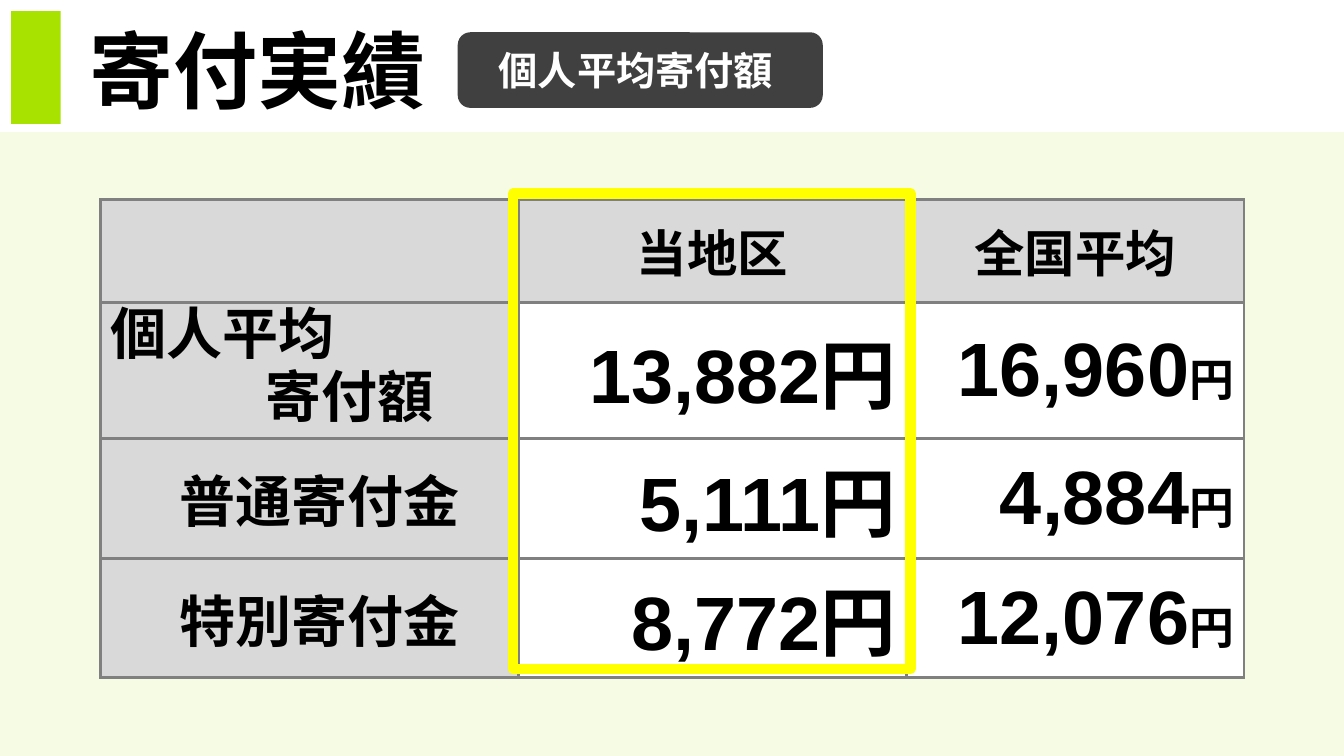
from dataclasses import dataclass
from typing import Any, NamedTuple, Optional

from lxml.etree import SubElement
from pptx import Presentation
from pptx.dml.color import RGBColor
from pptx.enum.shapes import MSO_SHAPE
from pptx.enum.text import MSO_ANCHOR, PP_ALIGN
from pptx.oxml.ns import qn
from pptx.util import Inches, Pt


@dataclass(frozen=True)
class Theme:
    """Colours, fonts and sizes in points shared by the whole slide."""

    background: str = "F5FCE3"
    accent: str = "A7E200"
    badge: str = "404040"
    highlight: str = "FFFF00"
    label_fill: str = "D9D9D9"
    value_fill: str = "FFFFFF"
    border: str = "808080"
    ink: str = "000000"
    light_ink: str = "FFFFFF"
    latin_font: str = "Arial"
    japanese_font: str = "Noto Sans CJK JP"
    title_size: float = 60
    badge_size: float = 28
    header_size: float = 36
    label_size: float = 40
    value_size: float = 54
    unit_size: float = 32
    border_width: float = 2.25
    highlight_width: float = 7.5


class Box(NamedTuple):
    """Left, top, width and height as percentages of the slide."""

    left: float
    top: float
    width: float
    height: float


class Block(NamedTuple):
    """A preset shape with its place, colours and optional text."""

    box: Box
    fill: Optional[str] = None
    line: Optional[str] = None
    preset: MSO_SHAPE = MSO_SHAPE.RECTANGLE
    text: str = ""


class Donation(NamedTuple):
    """One table row: its label, indents in inches and both amounts."""

    label: str
    margin: float
    indent: float
    district: str
    national: str


THEME = Theme()
SLIDE_WIDTH, SLIDE_HEIGHT = Inches(13.33), Inches(7.5)
TITLE_BOX = Box(5.93, 1.73, 92.65, 14.67)
TABLE_BOX = Box(7.5, 26.4, 85.07, 58.39)
COLUMN_SHARES = (31.06, 28.88, 25.13)
HEADER_SHARE, ROW_SHARE = 13.6, 14.93
HEADERS = ("", "当地区", "全国平均")
UNIT = "円"
DONATIONS = (
    Donation("個人平均\n寄付額", 1.53, -1.53, "13,882", "16,960"),
    Donation("普通寄付金", 0.68, 0, "5,111", "4,884"),
    Donation("特別寄付金", 0.68, 0, "8,772", "12,076"),
)
BACKDROP = (
    Block(Box(0, 17.47, 100, 82.53), THEME.background),
    Block(Box(0.83, 1.47, 3.68, 14.93), THEME.accent),
)
OVERLAYS = (
    Block(Box(38.18, 25.6, 29.56, 62.93), line=THEME.highlight),
    Block(Box(34.06, 4.27, 27.16, 10), THEME.badge,
          preset=MSO_SHAPE.ROUNDED_RECTANGLE, text="個人平均寄付額 "),
)


def across(share: float) -> int:
    """Convert a percentage of the slide width to a length."""
    return round(SLIDE_WIDTH * share / 100)


def down(share: float) -> int:
    """Convert a percentage of the slide height to a length."""
    return round(SLIDE_HEIGHT * share / 100)


def place(box: Box) -> tuple[int, int, int, int]:
    """Convert a box to slide lengths."""
    return across(box.left), down(box.top), across(box.width), down(box.height)


def write(paragraph: Any, text: str, *, size: float, color: str = THEME.ink,
          font: str = THEME.latin_font,
          align: PP_ALIGN = PP_ALIGN.LEFT) -> None:
    """Add bold text to a paragraph, breaking lines at newlines."""
    paragraph.alignment = align
    for number, line in enumerate(text.split("\n")):
        if number:
            paragraph.add_line_break()
        run = paragraph.add_run()
        run.text = line
        run.font.size = Pt(size)
        run.font.bold = True
        run.font.color.rgb = RGBColor.from_string(color)
        run.font.name = font
        SubElement(run.font._element, qn("a:ea"), typeface=THEME.japanese_font)


def add_block(slide: Any, block: Block) -> None:
    """Draw a preset shape with its text."""
    shape = slide.shapes.add_shape(block.preset, *place(block.box))
    shape.shadow.inherit = False
    if block.fill:
        shape.fill.solid()
        shape.fill.fore_color.rgb = RGBColor.from_string(block.fill)
    else:
        shape.fill.background()
    if block.line:
        shape.line.color.rgb = RGBColor.from_string(block.line)
        shape.line.width = Pt(THEME.highlight_width)
    else:
        shape.line.fill.background()
    if block.text:
        shape.text_frame.vertical_anchor = MSO_ANCHOR.MIDDLE
        write(shape.text_frame.paragraphs[0], block.text, size=THEME.badge_size,
              color=THEME.light_ink, font=THEME.japanese_font,
              align=PP_ALIGN.CENTER)


def style_cell(cell: Any, fill: str) -> Any:
    """Set borders, fill and anchor of a cell and return its paragraph."""
    properties = cell._tc.get_or_add_tcPr()
    for side in ("a:lnL", "a:lnR", "a:lnT", "a:lnB"):
        line = SubElement(properties, qn(side), w=str(Pt(THEME.border_width)))
        solid = SubElement(line, qn("a:solidFill"))
        SubElement(solid, qn("a:srgbClr"), val=THEME.border)
    cell.fill.solid()
    cell.fill.fore_color.rgb = RGBColor.from_string(fill)
    cell.vertical_anchor = MSO_ANCHOR.MIDDLE
    return cell.text_frame.paragraphs[0]


def write_label(paragraph: Any, donation: Donation) -> None:
    """Write a row label with its indents and fixed line pitch."""
    properties = paragraph._p.get_or_add_pPr()
    properties.set("marL", str(Inches(donation.margin)))
    properties.set("indent", str(Inches(donation.indent)))
    if "\n" in donation.label:
        paragraph.line_spacing = Pt(45)
        paragraph.space_before = Pt(12)
    write(paragraph, donation.label, size=THEME.label_size)


def add_donation_table(slide: Any) -> None:
    """Build the table comparing the district with the nation."""
    table = slide.shapes.add_table(
        len(DONATIONS) + 1, len(HEADERS), *place(TABLE_BOX)).table
    table.first_row = table.horz_banding = False
    for column, share in zip(table.columns, COLUMN_SHARES):
        column.width = across(share)
    for number, row in enumerate(table.rows):
        row.height = down(ROW_SHARE if number else HEADER_SHARE)
    for cell, header in zip(table.rows[0].cells, HEADERS):
        paragraph = style_cell(cell, THEME.label_fill)
        if header:
            write(paragraph, header, size=THEME.header_size,
                  align=PP_ALIGN.CENTER)
    for number, donation in enumerate(DONATIONS, 1):
        label, district, national = table.rows[number].cells
        write_label(style_cell(label, THEME.label_fill), donation)
        write(style_cell(district, THEME.value_fill), donation.district + UNIT,
              size=THEME.value_size, align=PP_ALIGN.RIGHT)
        paragraph = style_cell(national, THEME.value_fill)
        for text, size in ((donation.national, THEME.value_size),
                           (UNIT, THEME.unit_size)):
            write(paragraph, text, size=size, align=PP_ALIGN.RIGHT)


def main() -> None:
    """Build and save the slide."""
    presentation = Presentation()
    presentation.slide_width, presentation.slide_height = SLIDE_WIDTH, SLIDE_HEIGHT
    slide = presentation.slides.add_slide(presentation.slide_layouts[5])
    title = slide.shapes.title
    title.left, title.top, title.width, title.height = place(TITLE_BOX)
    title.text_frame.vertical_anchor = MSO_ANCHOR.MIDDLE
    write(title.text_frame.paragraphs[0], "寄付実績", size=THEME.title_size,
          font=THEME.japanese_font)
    for block in BACKDROP:
        add_block(slide, block)
    add_donation_table(slide)
    for block in OVERLAYS:
        add_block(slide, block)
    presentation.save("out.pptx")


if __name__ == "__main__":
    main()
